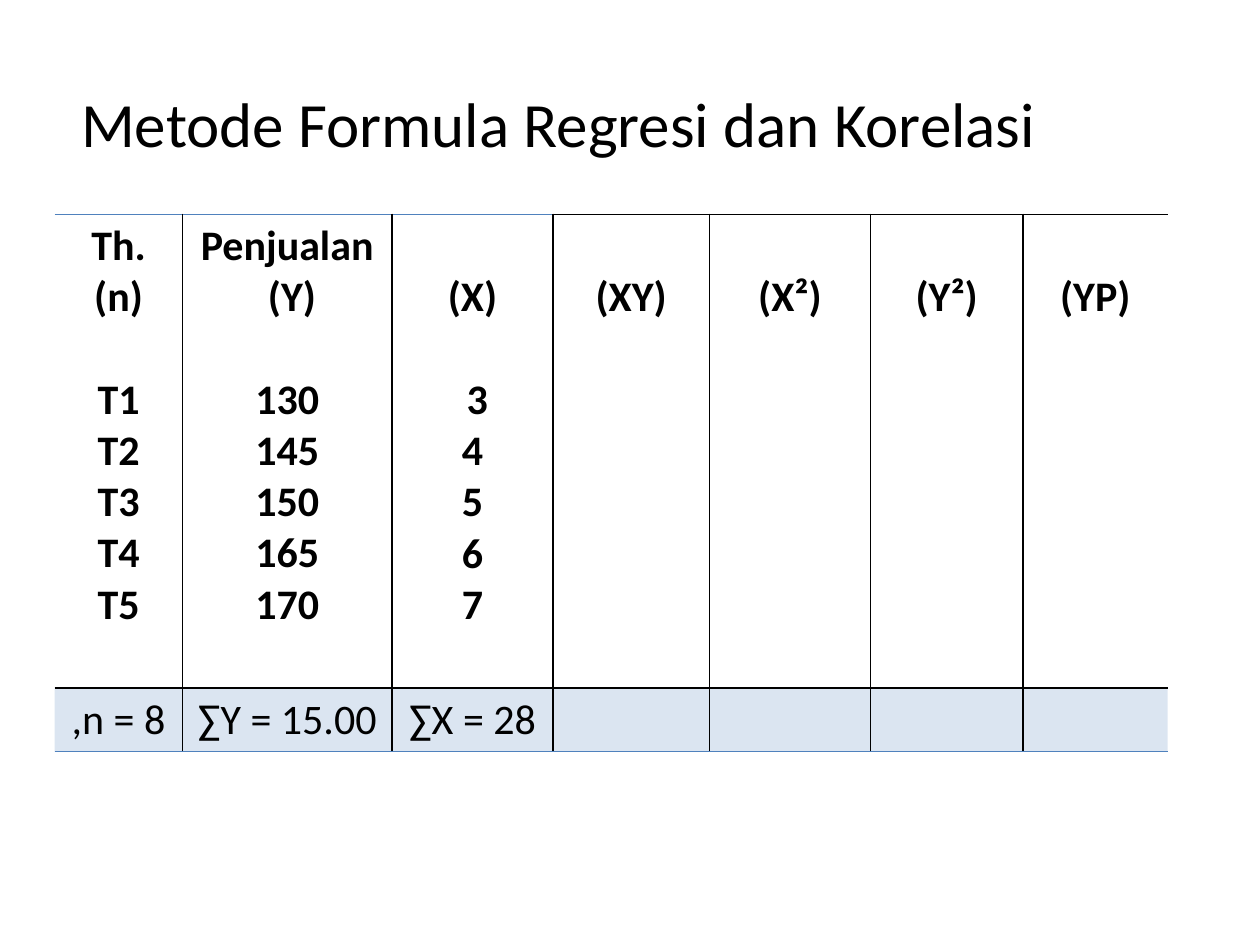
from lxml import etree
from pptx import Presentation
from pptx.dml.color import RGBColor
from pptx.enum.text import MSO_ANCHOR, PP_ALIGN
from pptx.oxml.ns import qn
from pptx.util import Cm, Pt

COLORS = {"text": "000000", "rule": "000000", "accent": "4F81BD"}
LINE = 29.3  # height of one 24 pt line, in points

HEADINGS = [["Th.", "(n)"], ["Penjualan", " (Y)"], ["(X)"], ["(XY)"],
            ["(X²)"], ["(Y²)"], ["(YP)"]]
VALUES = [["T1", "T2", "T3", "T4", "T5"],
          ["130", "145", "150", "165", "170"],
          [" 3", "4", "5", "6", "7"]]
TOTALS = [",n = 8", "∑Y = 15.00 ", "∑X = 28"]
COLUMN_WIDTHS = [2.58, 4.22, 3.25, 3.15, 3.25, 3.07, 2.92]
ROW_HEIGHTS = [9.55, 1.28]


class SlideBuilder:
    font = "Calibri"

    def __init__(self, slide):
        self.slide = slide

    def style(self, paragraph, size, bold=False):
        for run in paragraph.runs:
            run.font.name = self.font
            run.font.size = Pt(size)
            run.font.bold = bold
            run.font.color.rgb = RGBColor.from_string(COLORS["text"])

    def title(self, text, left, top, width, height):
        frame = self.slide.shapes.add_textbox(
            Cm(left), Cm(top), Cm(width), Cm(height)).text_frame
        frame.word_wrap = True
        frame.vertical_anchor = MSO_ANCHOR.MIDDLE
        frame.text = text
        self.style(frame.paragraphs[0], 36)

    def table(self, left, top, widths, heights):
        table = self.slide.shapes.add_table(
            len(heights), len(widths), Cm(left), Cm(top),
            Cm(sum(widths)), Cm(sum(heights))).table
        table.first_row = table.horz_banding = False
        for column, width in zip(table.columns, widths):
            column.width = Cm(width)
        for row, height in zip(table.rows, heights):
            row.height = Cm(height)
        return table

    def cell_text(self, cell, lines, bold=False):
        cell.text_frame.text = "\n".join(lines)
        for paragraph in cell.text_frame.paragraphs:
            paragraph.alignment = PP_ALIGN.CENTER
            paragraph.font.size = Pt(24)
            self.style(paragraph, 24, bold)

    def cell_fill(self, cell, color=None, opacity=100):
        if color is None:
            cell.fill.background()
            return
        cell.fill.solid()
        cell.fill.fore_color.rgb = RGBColor.from_string(COLORS[color])
        tint = cell._tc.tcPr.find(".//" + qn("a:srgbClr"))
        etree.SubElement(tint, qn("a:alpha"), val=str(opacity * 1000))

    def cell_borders(self, cell, **sides):
        """Draw the sides L, R, T and B in the named colours; None hides one."""
        properties = cell._tc.get_or_add_tcPr()
        for position, side in enumerate("LRTB"):
            line = etree.Element(qn("a:ln" + side), w=str(Pt(1)))
            properties.insert(position, line)
            color = sides[side]
            if color is None:
                etree.SubElement(line, qn("a:noFill"))
            else:
                fill = etree.SubElement(line, qn("a:solidFill"))
                etree.SubElement(fill, qn("a:srgbClr"), val=COLORS[color])


def main():
    presentation = Presentation()
    presentation.slide_width, presentation.slide_height = Cm(25.4), Cm(19.05)
    builder = SlideBuilder(
        presentation.slides.add_slide(presentation.slide_layouts[6]))

    # Title
    builder.title(" Metode Formula Regresi dan Korelasi", 1.1, 1.12, 23.2, 2.7)

    # Regression table: a tall data row above a row of totals
    regression = builder.table(1.1, 4.32, COLUMN_WIDTHS, ROW_HEIGHTS)
    last = len(HEADINGS) - 1
    for index, heading in enumerate(HEADINGS):
        values = VALUES[index] if index < len(VALUES) else []
        total = TOTALS[index] if index < len(TOTALS) else ""
        data_cell, total_cell = (regression.cell(row, index) for row in (0, 1))

        # Headings end on the second line, values start one line below
        builder.cell_text(data_cell, heading + values, bold=True)
        if len(heading) == 1:
            data_cell.margin_top = Cm(0.13) + Pt(LINE)
        if values:
            first_value = data_cell.text_frame.paragraphs[len(heading)]
            first_value.space_before = Pt(LINE)
        builder.cell_text(total_cell, [total])

        # Fills and rules; the outer sides stay open
        builder.cell_fill(data_cell)
        builder.cell_fill(total_cell, "accent", 20)
        sides = {"L": "rule" if index > 0 else None,
                 "R": "rule" if index < last else None}
        builder.cell_borders(data_cell, T="accent" if values else "rule",
                             B="rule", **sides)
        builder.cell_borders(total_cell, T="rule", B="accent", **sides)

    presentation.save("out.pptx")


if __name__ == "__main__":
    main()
